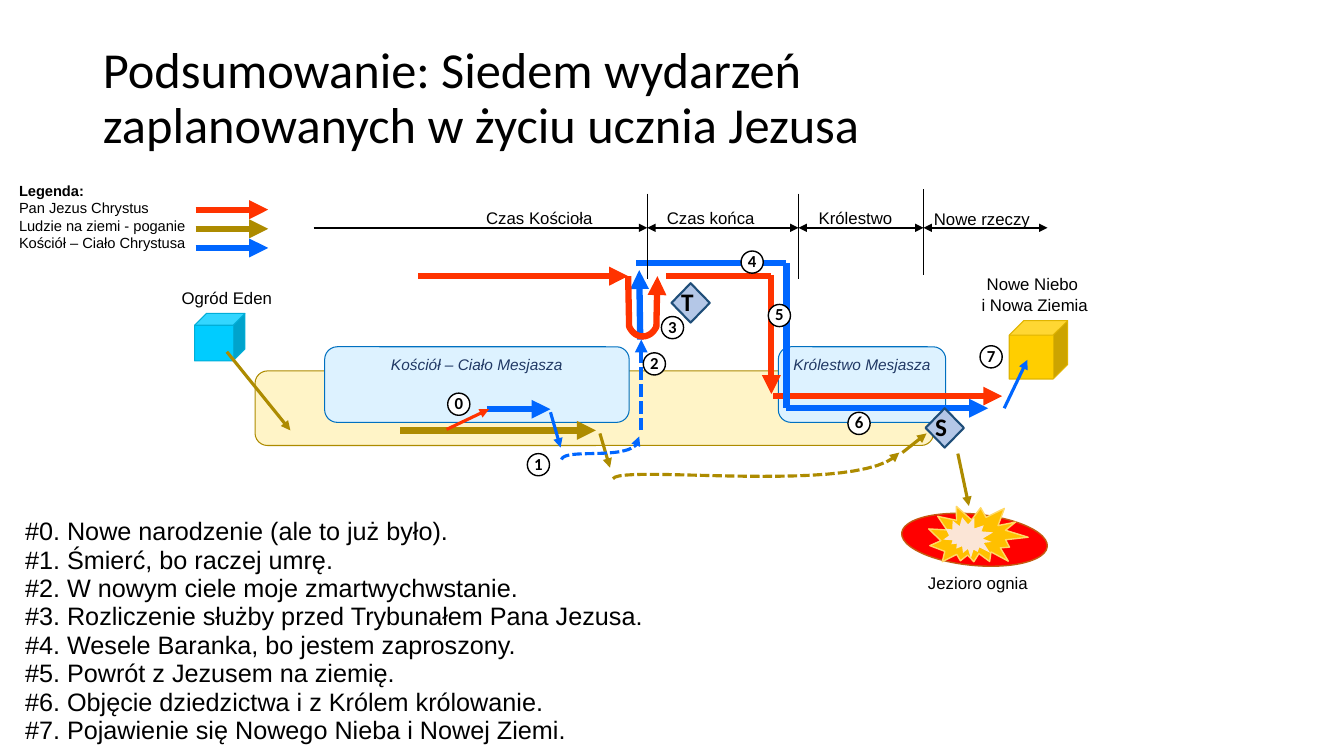
"""Build the slide on the seven events planned in the life of a disciple."""
from dataclasses import dataclass

from lxml.etree import SubElement
from pptx import Presentation
from pptx.dml.color import RGBColor
from pptx.enum.dml import MSO_LINE
from pptx.enum.shapes import MSO_CONNECTOR, MSO_SHAPE as Preset
from pptx.enum.text import MSO_ANCHOR as Anchor, MSO_AUTO_SIZE, PP_ALIGN as Align
from pptx.oxml.ns import qn
from pptx.util import Inches, Pt


@dataclass(frozen=True)
class Theme:
    """Colours, fonts and type sizes of the slide."""
    ink: str = "000000"
    paper: str = "FFFFFF"
    christ: str = "FF3300"
    people: str = "AD8B00"
    church: str = "0066FF"
    realm: str = "DDF2FF"
    realm_edge: str = "0070C0"
    realm_text: str = "203864"
    earth: str = "FFF4C7"
    court: str = "B4C7E7"
    court_edge: str = "1F4E79"
    body: str = "Arial"
    heading: str = "Calibri"
    title_size: float = 36
    list_size: float = 18
    label_size: float = 12
    realm_size: float = 11
    legend_size: float = 10.5
    thick: float = 4.5
    thin: float = 2.25


THEME = Theme()
CELL = Inches(0.1)

EVENTS = [
    "#0. Nowe narodzenie (ale to już było).",
    "#1. Śmierć, bo raczej umrę.",
    "#2. W nowym ciele moje zmartwychwstanie.",
    "#3. Rozliczenie służby przed Trybunałem Pana Jezusa.",
    "#4. Wesele Baranka, bo jestem zaproszony.",
    "#5. Powrót z Jezusem na ziemię.",
    "#6. Objęcie dziedzictwa i z Królem królowanie.",
    "#7. Pojawienie się Nowego Nieba i Nowej Ziemi.",
]
LEGEND = [("Pan Jezus Chrystus", THEME.christ),
          ("Ludzie na ziemi - poganie", THEME.people),
          ("Kościół – Ciało Chrystusa", THEME.church)]
EVENT_MARKS = [(44.4, 39), (52.3, 45), (63.8, 35), (65.6, 31.4),
               (73.5, 24.9), (76.2, 30.2), (84.1, 40.9), (97.2, 34.3)]
LABELS = [("Czas Kościoła", 46.3, 20.3, 14.4, 2.6), ("Czas końca", 64.8, 20.3, 11.4, 2.6),
          ("Królestwo", 80.2, 20.3, 9.3, 2.6), ("Nowe rzeczy", 91.6, 20.4, 11.6, 2.6),
          ("Jezioro ognia", 89.8, 56.5, 14.4, 2.6), ("Ogród Eden", 15.3, 28.2, 14.4, 2.6),
          ("Nowe Niebo\v i Nowa Ziemia", 95.2, 26.9, 14.4, 4.6)]
ARROWS = [
    (THEME.people, THEME.thick, [(39.7, 42.7), (59.1, 42.7)]),
    (THEME.christ, THEME.thick, [(41.5, 27.4), (62.3, 27.4)]),
    (THEME.church, THEME.thick, [(48.3, 40.6), (54.6, 40.6)]),
    (THEME.christ, THEME.thick, [(76.5, 27.3), (76.5, 39.1)]),
    (THEME.christ, THEME.thick, [(76.7, 39.3), (99.4, 39.3)]),
    (THEME.church, THEME.thick, [(78, 40.5), (98, 40.5)]),
    (THEME.church, THEME.thick, [(63.5, 33.7), (63.4, 26.8)]),
    (THEME.people, THEME.thin, [(89.5, 44.9), (91.9, 43)]),
    (THEME.people, THEME.thin, [(59.5, 43), (60.5, 46.4)]),
    (THEME.church, THEME.thin, [(54.6, 40.9), (55.6, 44.4)]),
    (THEME.people, THEME.thin, [(95, 45), (96.1, 50.2)]),
    (THEME.church, THEME.thin, [(99.6, 40.5), (101.9, 35.7)]),
    (THEME.christ, THEME.thin, [(44.3, 42.6), (48.5, 40.6)]),
    (THEME.people, THEME.thin, [(22.5, 34.9), (28.8, 42.7)]),
]


def cells(*counts):
    """Turn grid counts into lengths."""
    return [round(count * CELL) for count in counts]


def rgb(colour):
    """Read a hexadecimal colour."""
    return RGBColor.from_string(colour)


def write(frame, text, size, font=THEME.body, colour=THEME.ink, bold=False, italic=False,
          align=Align.LEFT, anchor=Anchor.TOP, inset=None, wrap=True, spacing=None):
    """Fill a text frame and format all of its runs."""
    frame.text = text
    frame.word_wrap = wrap
    frame.auto_size = MSO_AUTO_SIZE.NONE
    frame.vertical_anchor = anchor
    if inset is not None:
        frame.margin_left = frame.margin_right = Inches(inset)
        frame.margin_top = frame.margin_bottom = Inches(inset)
    for paragraph in frame.paragraphs:
        paragraph.alignment = align
        paragraph.line_spacing = spacing
        for run in paragraph.runs:
            run.font.name, run.font.size = font, Pt(size)
            run.font.bold, run.font.italic = bold, italic
            run.font.color.rgb = rgb(colour)


def textbox(slide, text, left, top, width, height, size, **style):
    """Add a text box on the grid and return its frame."""
    frame = slide.shapes.add_textbox(*cells(left, top, width, height)).text_frame
    write(frame, text, size, **style)
    return frame


def block(slide, preset, left, top, width, height, fill, edge=None, weight=1, turn=0):
    """Add a flat preset shape on the grid."""
    shape = slide.shapes.add_shape(preset, *cells(left, top, width, height))
    shape.shadow.inherit = False
    shape.rotation = turn
    shape.fill.solid()
    shape.fill.fore_color.rgb = rgb(fill)
    if edge:
        shape.line.color.rgb = rgb(edge)
        shape.line.width = Pt(weight)
    else:
        shape.line.fill.background()
    return shape


def stroke(route, colour, weight, dashed, ends):
    """Style a route's line and put triangles on the named ends."""
    route.line.color.rgb = rgb(colour)
    route.line.width = Pt(weight)
    if dashed:
        route.line.dash_style = MSO_LINE.SQUARE_DOT
    for end in ends:
        SubElement(route.line._get_or_add_ln(), qn(f"a:{end}End"), type="triangle")


def straight(slide, points, colour, weight, dashed=False, ends=("tail",)):
    """Connect two grid points."""
    (x1, y1), (x2, y2) = points
    route = slide.shapes.add_connector(MSO_CONNECTOR.STRAIGHT, *cells(x1, y1, x2, y2))
    stroke(route, colour, weight, dashed, ends)
    SubElement(route._element.spPr, qn("a:effectLst"))


def bezier(controls, steps=24):
    """Sample a cubic curve through its four control points."""
    shares = [step / steps for step in range(steps + 1)]
    return [tuple((1 - t) ** 3 * a + 3 * t * (1 - t) ** 2 * b + 3 * t * t * (1 - t) * c + t ** 3 * d
                  for a, b, c, d in zip(*controls)) for t in shares]


def curved(slide, points, colour, weight, dashed=False):
    """Draw an open arrow through many grid points."""
    start, *rest = [cells(*point) for point in points]
    builder = slide.shapes.build_freeform(*start)
    builder.add_line_segments(rest, close=False)
    route = builder.convert_to_shape()
    route.fill.background()
    route.shadow.inherit = False
    stroke(route, colour, weight, dashed, ("tail",))


def realm(slide, text, left, width):
    """Add a named rounded area of the Messiah."""
    area = block(slide, Preset.ROUNDED_RECTANGLE, left, 34.4, width, 7.5,
                 THEME.realm, THEME.realm_edge, 0.75)
    write(area.text_frame, text, THEME.realm_size, colour=THEME.realm_text, italic=True,
          align=Align.CENTER, wrap=False)


def timeline(slide):
    """Draw the ages and the borders between them."""
    borders = [(64.2, 19.2), (79.2, 19.2), (91.6, 18.8)]
    for x, top in borders:
        straight(slide, [(x, top), (x, top + 8.5)], THEME.ink, 0.5, ends=())
    stops = [31.1, *(x for x, _ in borders), 103.9]
    for index, (begin, finish) in enumerate(zip(stops, stops[1:])):
        ends = ("head", "tail") if index else ("tail",)
        straight(slide, [(begin, 22.6), (finish, 22.6)], THEME.ink, 1.5, ends=ends)


def journeys(slide):
    """Draw the ways of Christ, the Church and the people."""
    for colour, weight, points in ARROWS:
        straight(slide, points, colour, weight)
    for colour, points in [(THEME.church, [(63.1, 26.1), (78, 26.1)]),
                           (THEME.christ, [(66.1, 27.4), (76.5, 27.4)]),
                           (THEME.church, [(78, 26.1), (78, 40.5)])]:
        straight(slide, points, colour, THEME.thick, ends=())
    straight(slide, [(63.6, 42.7), (63.6, 33.7)], THEME.church, 3, dashed=True)
    turn = bezier([(62.4, 32.4), (63, 33.7), (64.5, 33.7), (65.1, 32.4)])
    curved(slide, [(62.3, 27.4), *turn, (65.2, 27.4)], THEME.christ, THEME.thick)
    for colour, controls in [
            (THEME.church, [(55.7, 45.6), (56, 44.3), (63.5, 46), (63.4, 43.3)]),
            (THEME.people, [(60.8, 47.5), (61.5, 46), (85.7, 49.2), (89.2, 44.9)])]:
        curved(slide, bezier(controls), colour, THEME.thin, dashed=True)


def legend(slide):
    """Name the three arrow colours."""
    names = "\n".join(["Legenda:", *(name for name, _ in LEGEND)])
    frame = textbox(slide, names, 0.9, 17.5, 19.9, 8.1, THEME.legend_size)
    frame.paragraphs[0].runs[0].font.bold = True
    for row, (_, colour) in enumerate(LEGEND):
        y = 20.8 + 1.9 * row
        straight(slide, [(19.4, y), (26.6, y)], colour, THEME.thick)


def main():
    """Compose and save the slide."""
    deck = Presentation()
    deck.slide_width, deck.slide_height = Inches(13.33), Inches(7.5)
    slide = deck.slides.add_slide(deck.slide_layouts[5])
    title = slide.shapes.title
    title.left, title.top, title.width, title.height = cells(9.2, 4, 115, 7.8)
    write(title.text_frame, "Podsumowanie: Siedem wydarzeń \vzaplanowanych w życiu ucznia Jezusa",
          THEME.title_size, font=THEME.heading, spacing=0.9)
    block(slide, Preset.ROUNDED_RECTANGLE, 25.3, 36.8, 67.3, 7.4, THEME.earth, THEME.people, 0.75)
    realm(slide, "Królestwo Mesjasza", 77.2, 16.6)
    realm(slide, "Kościół – Ciało Mesjasza", 32.2, 30.2)
    block(slide, Preset.CUBE, 100.1, 31.8, 5.8, 5.8, "FFCE00", "E0B400", 0.75)
    block(slide, Preset.CUBE, 19.3, 31.1, 5, 4.7, "00CCFF", "00AED8", 0.75)
    journeys(slide)
    timeline(slide)
    for text, *place in LABELS:
        textbox(slide, text, *place, THEME.label_size, align=Align.CENTER,
                anchor=Anchor.MIDDLE, inset=0.03)
    for letter, left, top in [("T", 66.6, 28.1), ("S", 91.8, 40.5)]:
        court = block(slide, Preset.DIAMOND, left, top, 3.8, 3.9, THEME.court, THEME.court_edge, 1.5)
        write(court.text_frame, letter, THEME.list_size, font=THEME.heading, bold=True,
              anchor=Anchor.MIDDLE, inset=0, spacing=0.9)
    block(slide, Preset.FLOWCHART_CONNECTOR, 89.4, 51, 14.5, 5.1, "FF0000", "C55A11", turn=5.4)
    block(slide, Preset.EXPLOSION2, 92.1, 49.8, 9.7, 6.8, "FFC000", "FFD966", turn=16.2)
    block(slide, Preset.EXPLOSION2, 93.8, 51.1, 4.7, 4.5, "FBE5D6", turn=56.2)
    for number, (left, top) in enumerate(EVENT_MARKS):
        mark = block(slide, Preset.OVAL, left, top, 2.2, 2.2, THEME.paper, THEME.ink)
        write(mark.text_frame, str(number), THEME.label_size, font=THEME.heading, bold=True,
              align=Align.CENTER, anchor=Anchor.MIDDLE, inset=0, wrap=False, spacing=0.9)
    textbox(slide, "\v".join(EVENTS), 1.5, 50.9, 86.2, 22.3, THEME.list_size, spacing=0.94)
    legend(slide)
    deck.save("out.pptx")


if __name__ == "__main__":
    main()
